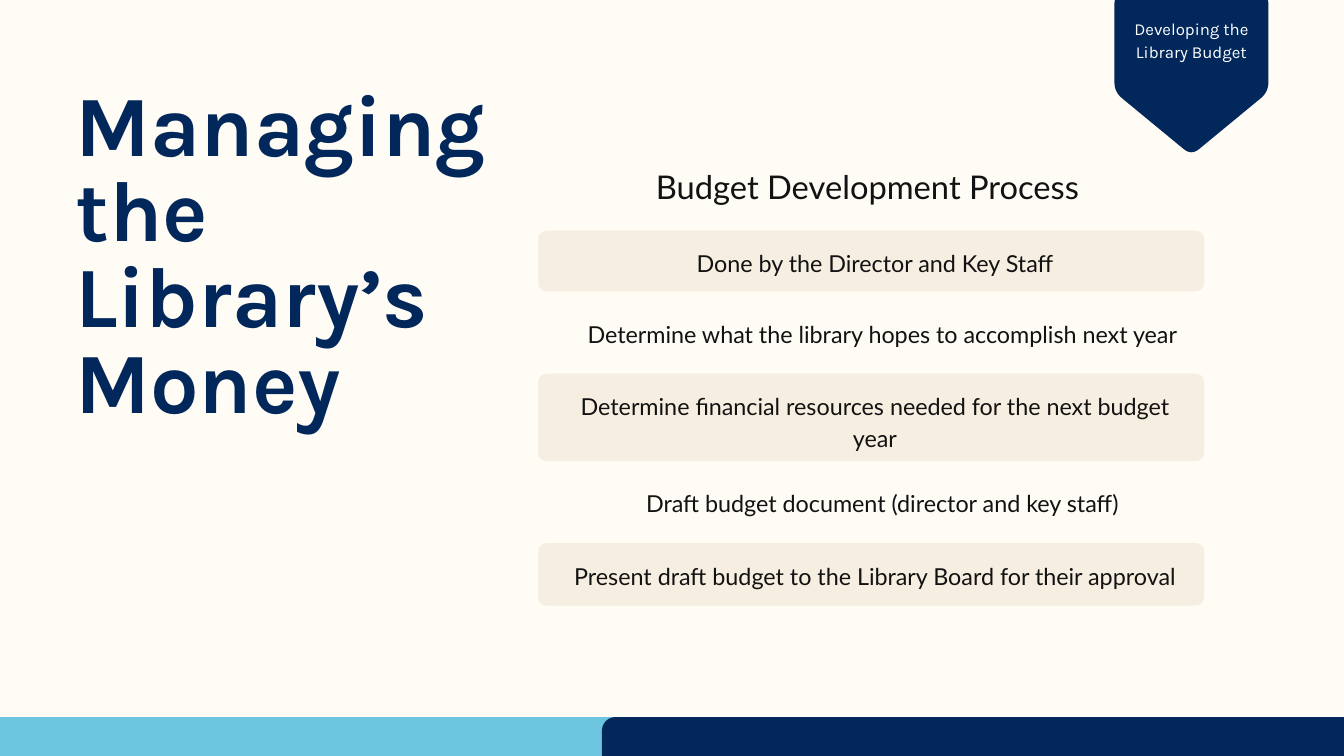
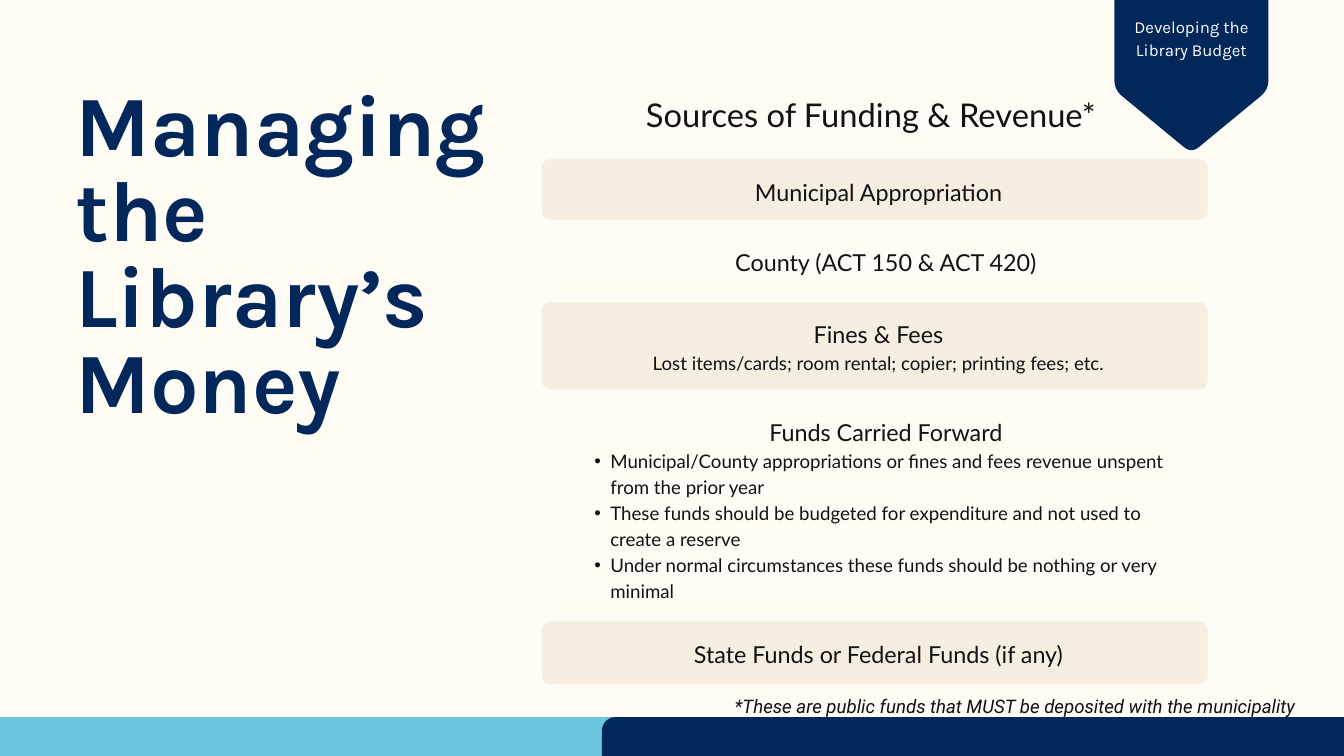
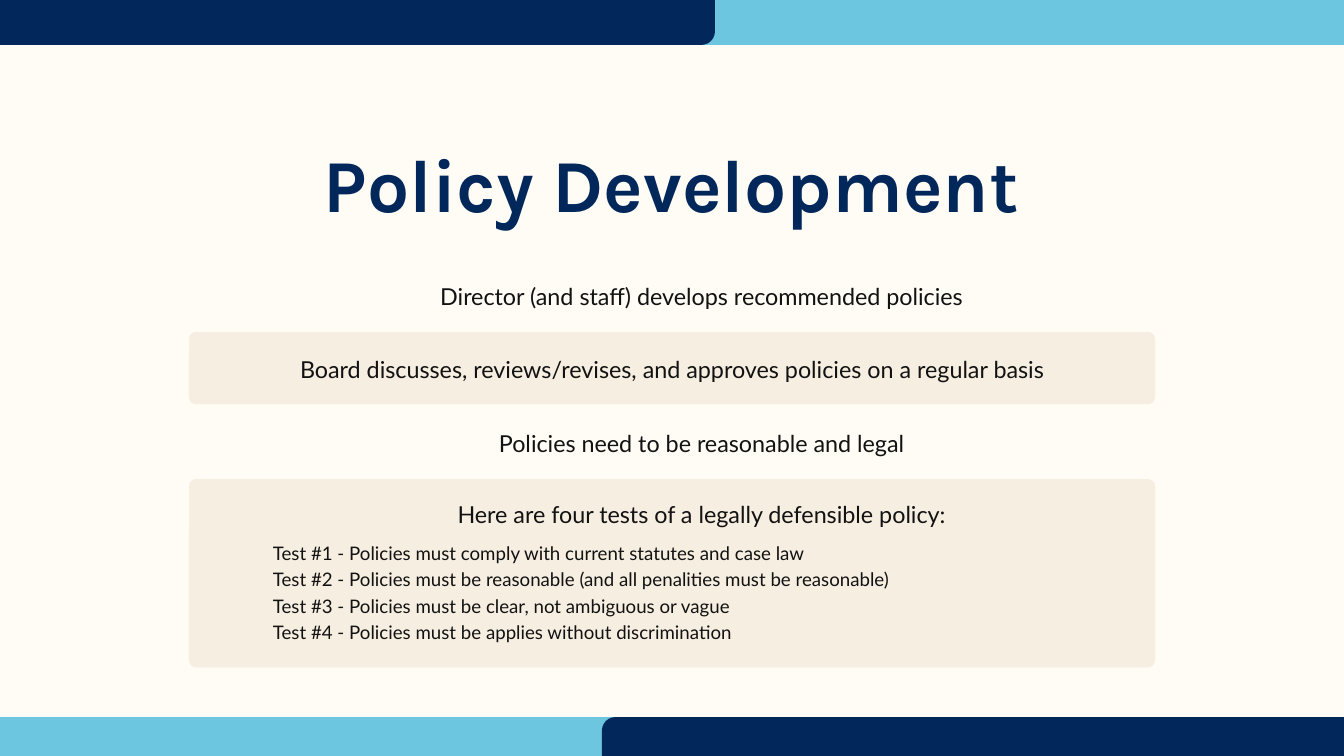
from dataclasses import dataclass

from lxml.etree import SubElement
from pptx import Presentation
from pptx.dml.color import RGBColor
from pptx.enum.shapes import MSO_SHAPE as Preset
from pptx.enum.text import MSO_ANCHOR as Anchor, MSO_AUTO_SIZE as AutoSize, PP_ALIGN as Align
from pptx.oxml.ns import qn
from pptx.util import Pt

# Shared look
CREAM, SAND, SKY, NAVY = "FFFBF5", "F6EEE1", "6CC6DF", "02285B"
INK, WHITE = "121212", "FFFFFF"
TITLE_ONLY, TITLE_AND_BODY = 5, 1
BADGE_TEXT = "Developing the Library Budget"
MAIN_TITLE = "Managing the Library’s Money"


@dataclass(frozen=True)
class Style:
    font: str
    size: float
    spacing: float
    colour: str = INK
    align: Align = Align.CENTER
    bold: bool = False
    italic: bool = False


SIDE_TITLE = Style("Karla", 92, 92, NAVY, Align.LEFT, bold=True)
WIDE_TITLE = Style("Karla", 80, 80, NAVY, bold=True)
BADGE = Style("Karla", 18, 25.2, WHITE)
HEADING = Style("Lato", 35, 49)
ROW = Style("Lato", 25, 35)
DETAIL = Style("Lato", 20, 28)
LIST = Style("Lato", 20, 28, align=Align.LEFT)
FOOTNOTE = Style("Roboto", 20, 28, italic=True)


@dataclass(frozen=True)
class Box:
    left: float
    top: float
    width: float
    height: float

    def half_turn(self, centre_x: float, centre_y: float) -> "Box":
        return Box(2 * centre_x - self.left - self.width,
                   2 * centre_y - self.top - self.height, self.width, self.height)

    def lengths(self) -> tuple:
        return Pt(self.left), Pt(self.top), Pt(self.width), Pt(self.height)


@dataclass(frozen=True)
class Line:
    text: str
    style: Style = ROW
    bullet: bool = False
    space_before: float = 0


@dataclass(frozen=True)
class Row:
    """A row of the right column; tops are measured from the first panel."""
    text_top: float
    text_height: float = 33
    panel_top: float = 0
    panel_height: float = 0


COLUMN_ROWS = (
    Row(15.1, panel_height=65),
    Row(90.4),
    Row(167.6, 67.7, panel_top=153.2, panel_height=93.8),
    Row(272.1, 200),
    Row(349.9, panel_top=334.7, panel_height=67),
)
SKY_BAND = Box(-72.7, 768.3, 1160, 140.4)
NAVY_BAND = Box(645, 768.3, 1012.3, 112.3)


def colour(value: str) -> RGBColor:
    return RGBColor.from_string(value)


def assign(target, values: dict) -> None:
    for name, value in values.items():
        setattr(target, name, value)


def paint(shape, fill: str) -> None:
    shape.shadow.inherit = False
    shape.fill.solid()
    shape.fill.fore_color.rgb = colour(fill)
    shape.line.fill.background()


def add_block(slide, box: Box, fill: str, radius: float = 0) -> None:
    preset = Preset.ROUNDED_RECTANGLE if radius else Preset.RECTANGLE
    shape = slide.shapes.add_shape(preset, *box.lengths())
    if radius:
        shape.adjustments[0] = radius / min(box.width, box.height)
    paint(shape, fill)


# Text
def set_bullet(paragraph, bullet: bool) -> None:
    properties = paragraph._p.get_or_add_pPr()
    properties.set("marL", str(Pt(33.8) if bullet else 0))
    properties.set("indent", str(Pt(-17) if bullet else 0))
    if bullet:
        SubElement(properties, qn("a:buChar")).set("char", "•")
    else:
        SubElement(properties, qn("a:buNone"))


def write(shape, box: Box, lines: list[Line], anchor=Anchor.TOP, inset: float = 0) -> None:
    assign(shape, dict(zip(("left", "top", "width", "height"), box.lengths())))
    frame = shape.text_frame
    assign(frame, {"word_wrap": True, "auto_size": AutoSize.NONE, "vertical_anchor": anchor})
    assign(frame, {f"margin_{side}": Pt(inset) for side in ("left", "top", "right", "bottom")})
    for index, line in enumerate(lines):
        paragraph = frame.add_paragraph() if index else frame.paragraphs[0]
        style = line.style
        if line.bullet or shape.is_placeholder:
            set_bullet(paragraph, line.bullet)
        assign(paragraph, {"alignment": style.align, "line_spacing": Pt(style.spacing),
                           "space_before": Pt(line.space_before), "space_after": Pt(0),
                           "level": int(line.bullet)})
        run = paragraph.add_run()
        run.text = line.text
        assign(run.font, {"name": style.font, "size": Pt(style.size),
                          "bold": style.bold, "italic": style.italic})
        run.font.color.rgb = colour(style.colour)


def add_text(slide, box: Box, lines: list[Line], **options) -> None:
    write(slide.shapes.add_textbox(*box.lengths()), box, lines, **options)


def fill_body(slide, box: Box, lines: list[Line]) -> None:
    body = slide.placeholders[1]
    slide.shapes.element.append(body.element)  # bring in front of the panels
    write(body, box, lines)


# Slide parts
def rounded_outline(corners: list[tuple], cut: float, steps: int = 6) -> list[tuple]:
    """Replace each corner by points on a quadratic curve."""
    points = []
    for index, (x, y) in enumerate(corners):
        ends = []
        for near_x, near_y in (corners[index - 1], corners[(index + 1) % len(corners)]):
            share = cut / ((near_x - x) ** 2 + (near_y - y) ** 2) ** 0.5
            ends.append((x + share * (near_x - x), y + share * (near_y - y)))
        (start_x, start_y), (end_x, end_y) = ends
        for step in range(steps + 1):
            t = step / steps
            a, b, c = (1 - t) ** 2, 2 * t * (1 - t), t ** 2
            points.append((a * start_x + b * x + c * end_x, a * start_y + b * y + c * end_y))
    return points


def add_badge(slide, top: float) -> None:
    left, width, shoulder, tip = 1194, 165, top + 105, top + 173
    right = left + width
    corners = [(left, top), (right, top), (right, shoulder),
               (left + width / 2, tip), (left, shoulder)]
    points = [(Pt(x), Pt(y)) for x, y in rounded_outline(corners, 10.5)]
    builder = slide.shapes.build_freeform(*points[0])
    builder.add_line_segments(points[1:], close=True)
    paint(builder.convert_to_shape(), NAVY)
    add_text(slide, Box(left, top - 4.2, width, 104.4), [Line(BADGE_TEXT, BADGE)],
             anchor=Anchor.MIDDLE, inset=4)


def add_slide(presentation, layout: int, title: Line, title_box: Box):
    slide = presentation.slides.add_slide(presentation.slide_layouts[layout])
    add_block(slide, SKY_BAND, SKY)
    add_block(slide, NAVY_BAND, NAVY, radius=14.3)
    write(slide.shapes.title, title_box, [title])
    return slide


def add_budget_slide(presentation, layout: int, left: float, top: float, badge_top: float,
                     heading: str, rows: list[list[Line]], last_drop: float = 0):
    slide = add_slide(presentation, layout, Line(MAIN_TITLE, SIDE_TITLE),
                      Box(80.6, 93.6, 540.7, 370.8))
    add_badge(slide, badge_top)
    add_text(slide, Box(left + 39.6, top - 76, 626.4, 46.8), [Line(heading, HEADING)])
    for row, lines in zip(COLUMN_ROWS, rows):
        row_top = top + (last_drop if row is COLUMN_ROWS[-1] else 0)
        if row.panel_height:
            add_block(slide, Box(left, row_top + row.panel_top, 713.4, row.panel_height),
                      SAND, radius=8.6)
        text_left = left + (31.7 if row.panel_height else 39.6)
        box = Box(text_left, row_top + row.text_top, 658, row.text_height)
        place = fill_body if any(line.bullet for line in lines) else add_text
        place(slide, box, lines)
    return slide


# Slides
def add_process_slide(presentation) -> None:
    texts = ["Done by the Director and Key Staff",
             "Determine what the library hopes to accomplish next year",
             "Determine financial resources needed for the next budget year",
             "Draft budget document (director and key staff)",
             "Present draft budget to the Library Board for their approval"]
    add_budget_slide(presentation, TITLE_ONLY, 576.7, 247.2, -6.5,
                     "Budget Development Process", [[Line(text)] for text in texts])


def add_funding_slide(presentation) -> None:
    carried = ["Municipal/County appropriations or fines and fees revenue unspent "
               "from the prior year",
               "These funds should be budgeted for expenditure and not used to create a reserve",
               "Under normal circumstances these funds should be nothing or very minimal"]
    rows = [
        [Line("Municipal Appropriation")],
        [Line("County (ACT 150 & ACT 420)")],
        [Line("Fines & Fees"),
         Line("Lost items/cards; room rental; copier; printing fees; etc.", DETAIL)],
        [Line("Funds Carried Forward")] + [Line(text, LIST, bullet=True) for text in carried],
        [Line("State Funds or Federal Funds (if any)")],
    ]
    slide = add_budget_slide(presentation, TITLE_AND_BODY, 580.5, 170.5, -8.8,
                             "Sources of Funding & Revenue*", rows, last_drop=160.8)
    note = "*These are public funds that MUST be deposited with the municipality"
    add_text(slide, Box(698.4, 740.9, 778.3, 27.4), [Line(note, FOOTNOTE)])


def add_policy_slide(presentation) -> None:
    slide = add_slide(presentation, TITLE_AND_BODY, Line("Policy Development", WIDE_TITLE),
                      Box(206.6, 163.4, 1026, 84.2))
    add_block(slide, SKY_BAND.half_turn(705.5, 408.2), SKY)
    add_block(slide, NAVY_BAND.half_turn(705.5, 408.2), NAVY, radius=14.3)
    for top, height in ((355.8, 77.2), (513.4, 201.6)):
        add_block(slide, Box(202.5, top, 1035, height), SAND, radius=7)
    statements = [
        (276.5, 297.4, 950.4, "Director (and staff) develops recommended policies"),
        (251.3, 375.8, 937.4,
         "Board discusses, reviews/revises, and approves policies on a regular basis"),
        (276.5, 455, 950.4, "Policies need to be reasonable and legal"),
    ]
    for left, top, width, text in statements:
        add_text(slide, Box(left, top, width, 33), [Line(text)])
    tests = ["comply with current statutes and case law",
             "be reasonable (and all penalities must be reasonable)",
             "be clear, not ambiguous or vague",
             "be applies without discrimination"]
    lines = [Line("Here are four tests of a legally defensible policy:")]
    for number, test in enumerate(tests, 1):
        lines.append(Line(f"Test #{number} - Policies must {test}", LIST,
                          space_before=11.2 if number == 1 else 0))
    fill_body(slide, Box(292.3, 530.6, 918.7, 156.2), lines)


def main() -> None:
    presentation = Presentation()
    assign(presentation, {"slide_width": Pt(1440), "slide_height": Pt(810)})
    background = presentation.slide_master.background.fill
    background.solid()
    background.fore_color.rgb = colour(CREAM)
    add_process_slide(presentation)
    add_funding_slide(presentation)
    add_policy_slide(presentation)
    presentation.save("out.pptx")


if __name__ == "__main__":
    main()
